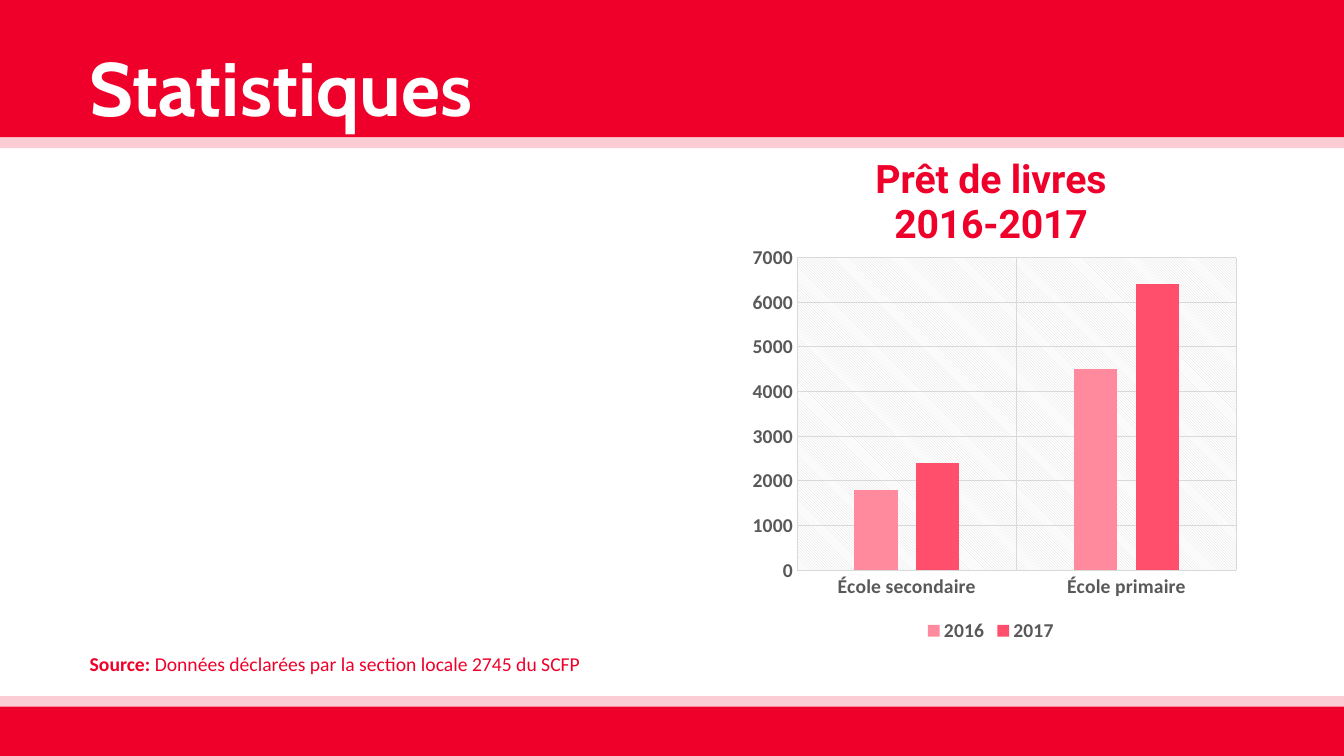
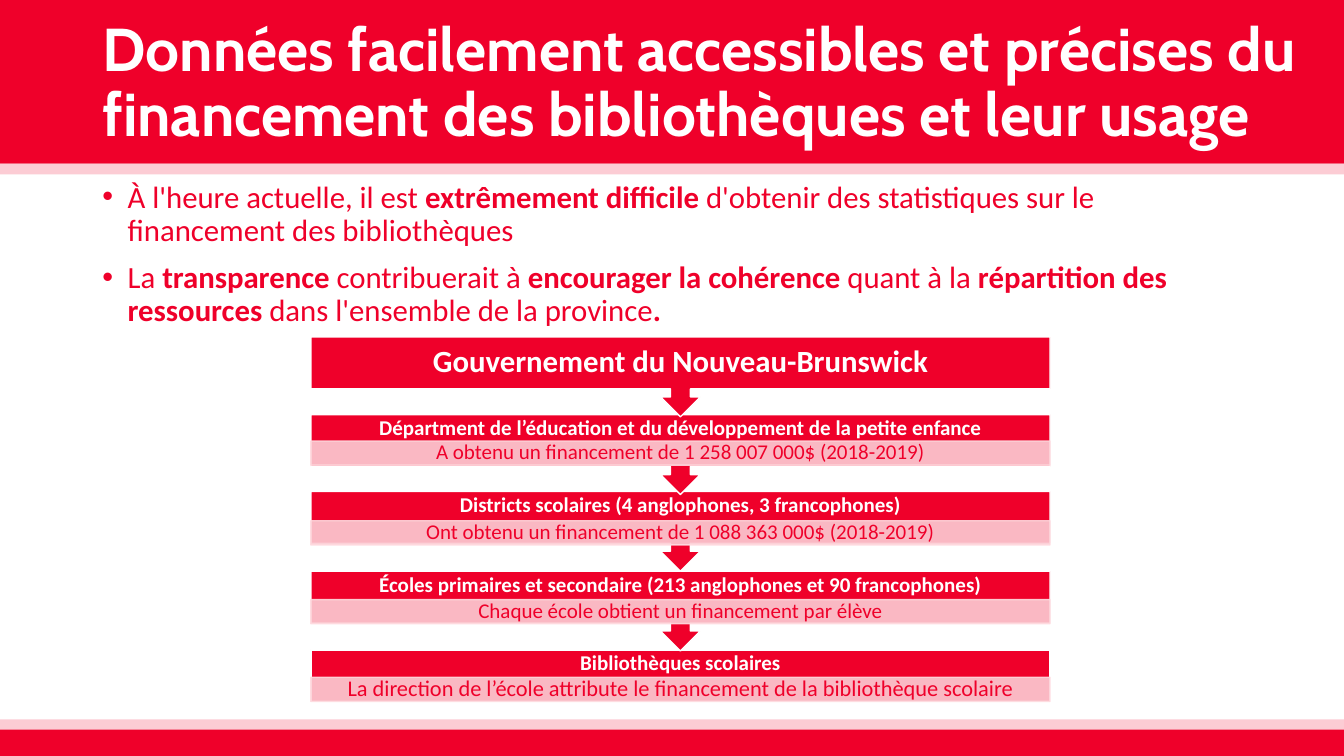
from lxml.etree import SubElement
from pptx import Presentation
from pptx.chart.data import CategoryChartData
from pptx.dml.color import RGBColor
from pptx.enum.chart import XL_CHART_TYPE, XL_LEGEND_POSITION, XL_TICK_MARK
from pptx.enum.shapes import MSO_SHAPE
from pptx.enum.text import MSO_ANCHOR, MSO_AUTO_SIZE, PP_ALIGN
from pptx.oxml import parse_xml
from pptx.oxml.ns import nsdecls, qn
from pptx.util import Pt

PX = 9525
WIDTH, HEIGHT = 1280, 720
STRIP_HEIGHT = 10
TITLE_ONLY, TITLE_AND_CONTENT = 5, 1

RED = RGBColor(0xEF, 0x00, 0x2A)
PALE_PINK = RGBColor(0xFC, 0xCC, 0xD4)
EDGE_PINK = RGBColor(0xFF, 0xDA, 0xDF)
LIGHT_RED = RGBColor(0xFF, 0x89, 0x9D)
MID_RED = RGBColor(0xFF, 0x4F, 0x6C)
WHITE = RGBColor(0xFF, 0xFF, 0xFF)
GREY = RGBColor(0x59, 0x59, 0x59)
GRID_GREY = RGBColor(0xD9, 0xD9, 0xD9)

STATISTICS = {
    "title": "Statistiques", "size": 54, "anchor": MSO_ANCHOR.BOTTOM,
    "title_box": (76, 0, 1104, 131), "top": 131, "lower_strip": 663, "bottom": 672,
}
FUNDING = {
    "title": "Données facilement accessibles et précises du financement des bibliothèques et leur usage",
    "size": 43.2, "anchor": MSO_ANCHOR.MIDDLE,
    "title_box": (88, 11, 1192, 139), "top": 156, "lower_strip": 685, "bottom": 694,
}

CHART_BOX = (710, 131, 468, 485)
CHART_TITLE = "Prêt de livres\n2016-2017"
SCHOOLS = ("École secondaire", "École primaire")
LOANS = (("2016", (1800, 4500), LIGHT_RED), ("2017", (2400, 6400), MID_RED))
PLOT_LAYOUT = {"x": 0.105, "y": 0.236, "w": 0.895, "h": 0.614}

SOURCE_BOX = (76, 616, 510, 33)
SOURCE = (("Source: ", True), ("Données déclarées par la section locale 2745 du SCFP", False))

BODY_BOX = (88, 168, 1104, 457)
BULLETS = (
    (
        ("À l'heure actuelle, il est ", False),
        ("extrêmement difficile ", True),
        ("d'obtenir des statistiques sur le financement des bibliothèques", False),
    ),
    (
        ("La ", False),
        ("transparence", True),
        (" contribuerait à ", False),
        ("encourager la cohérence ", True),
        ("quant à la ", False),
        ("répartition des ressources ", True),
        ("dans l'ensemble de la province", False),
        (".", True),
    ),
)

FLOW_LEFT, FLOW_WIDTH = 296, 704
CALLOUT_HEIGHT, BOX_HEIGHT = 76, 49
LABEL_HEIGHT, DETAIL_HEIGHT = 27, 23
GOVERNMENT = (321, "Gouvernement du Nouveau-Brunswick")
LEVELS = (
    (395, "Départment de l’éducation et du développement de la petite enfance",
     420, "A obtenu un financement de 1 258 007 000$ (2018-2019)", 15),
    (468, "Districts scolaires (4 anglophones, 3 francophones)",
     496, "Ont obtenu un financement de 1 088 363 000$ (2018-2019)", 15),
    (544, "Écoles primaires et secondaire (213 anglophones et 90 francophones)",
     571, "Chaque école obtient un financement par élève", 15),
    (619, "Bibliothèques scolaires",
     645, "La direction de l’école attribute le financement de la bibliothèque scolaire", 16),
)


def scaled(box):
    return [length * PX for length in box]


def place(shape, box):
    shape.left, shape.top, shape.width, shape.height = scaled(box)


def style(font, size, color, bold=False, name="Calibri"):
    font.size, font.bold, font.name = Pt(size), bold, name
    font.color.rgb = color


def add_block(slide, box, fill, kind=MSO_SHAPE.RECTANGLE, line=None, opacity=None):
    shape = slide.shapes.add_shape(kind, *scaled(box))
    shape.shadow.inherit = False
    shape.fill.solid()
    shape.fill.fore_color.rgb = fill
    if line is None:
        shape.line.fill.background()
    else:
        shape.line.color.rgb = line
        shape.line.width = Pt(1)
    if opacity:
        for color in shape.element.xpath(".//p:spPr//a:srgbClr"):
            SubElement(color, qn("a:alpha"), val=str(opacity * 1000))
    return shape


def write_centred(shape, text, size, color, bold=False, bottom_inset=0):
    frame = shape.text_frame
    frame.word_wrap = True
    frame.vertical_anchor = MSO_ANCHOR.MIDDLE
    frame.margin_top = 0
    frame.margin_bottom = bottom_inset * PX
    paragraph = frame.paragraphs[0]
    paragraph.text = text
    paragraph.alignment = PP_ALIGN.CENTER
    paragraph.line_spacing = 0.9
    style(paragraph.font, size, color, bold)


def write_runs(paragraph, parts, size):
    for text, bold in parts:
        run = paragraph.add_run()
        run.text = text
        style(run.font, size, RED, bold)


def add_titled_slide(presentation, design, layout):
    slide = presentation.slides.add_slide(presentation.slide_layouts[layout])
    bands = (
        (0, design["top"], RED),
        (design["bottom"], HEIGHT - design["bottom"], RED),
        (design["lower_strip"], STRIP_HEIGHT, PALE_PINK),
        (design["top"], STRIP_HEIGHT, PALE_PINK),
    )
    for top, height, color in bands:
        add_block(slide, (0, top, WIDTH, height), color)
    title = slide.shapes.title
    place(title, design["title_box"])
    slide.shapes.element.append(title.element)
    frame = title.text_frame
    frame.auto_size = MSO_AUTO_SIZE.NONE
    frame.vertical_anchor = design["anchor"]
    paragraph = frame.paragraphs[0]
    paragraph.text = design["title"]
    paragraph.alignment = PP_ALIGN.LEFT
    paragraph.line_spacing = 0.9
    style(paragraph.font, design["size"], WHITE, True, "Cabin")
    return slide


def format_plot_area(chart):
    plot_area = chart.element.xpath(".//c:plotArea")[0]
    for layout in plot_area.findall(qn("c:layout")):
        plot_area.remove(layout)
    modes = '<c:xMode val="edge"/><c:yMode val="edge"/>'
    lengths = "".join(f'<c:{key} val="{value}"/>' for key, value in PLOT_LAYOUT.items())
    plot_area.insert(0, parse_xml(
        f'<c:layout {nsdecls("c")}><c:manualLayout><c:layoutTarget val="inner"/>'
        f'{modes}{lengths}</c:manualLayout></c:layout>'
    ))
    plot_area.append(parse_xml(
        f'<c:spPr {nsdecls("c", "a")}><a:pattFill prst="ltDnDiag">'
        f'<a:fgClr><a:srgbClr val="{GRID_GREY}"/></a:fgClr>'
        f'<a:bgClr><a:srgbClr val="{WHITE}"/></a:bgClr></a:pattFill></c:spPr>'
    ))


def add_loans_chart(slide):
    data = CategoryChartData()
    data.categories = SCHOOLS
    for name, values, color in LOANS:
        data.add_series(name, values)
    graphic = slide.shapes.add_chart(XL_CHART_TYPE.COLUMN_CLUSTERED, *scaled(CHART_BOX), data)
    slide.shapes.element.insert(2, graphic.element)
    chart = graphic.chart
    style(chart.font, 14, GREY, True)

    chart.has_title = True
    chart.chart_title.include_in_layout = False
    chart.chart_title.text_frame.text = CHART_TITLE
    for paragraph in chart.chart_title.text_frame.paragraphs:
        style(paragraph.runs[0].font, 28, RED, True, "Roboto")

    chart.has_legend = True
    chart.legend.position = XL_LEGEND_POSITION.BOTTOM
    chart.legend.include_in_layout = False
    style(chart.legend.font, 14, GREY, True)

    for axis in (chart.category_axis, chart.value_axis):
        axis.major_tick_mark = axis.minor_tick_mark = XL_TICK_MARK.NONE
        axis.has_major_gridlines = True
        for line in (axis.major_gridlines.format.line, axis.format.line):
            line.color.rgb = GRID_GREY
            line.width = Pt(0.75)
        style(axis.tick_labels.font, 14, GREY, True)
    chart.value_axis.format.line.fill.background()
    chart.value_axis.minimum_scale = 0
    chart.value_axis.maximum_scale = 7000
    chart.value_axis.major_unit = 1000

    plot = chart.plots[0]
    plot.gap_width, plot.overlap = 267, -43
    plot.vary_by_categories = False
    for series, (name, values, color) in zip(plot.series, LOANS):
        series.format.fill.solid()
        series.format.fill.fore_color.rgb = color
    format_plot_area(chart)


def build_statistics(presentation):
    slide = add_titled_slide(presentation, STATISTICS, TITLE_ONLY)
    add_loans_chart(slide)
    source = slide.shapes.add_textbox(*scaled(SOURCE_BOX))
    source.text_frame.word_wrap = False
    write_runs(source.text_frame.paragraphs[0], SOURCE, 14)


def write_bullets(slide):
    body = slide.placeholders[1]
    place(body, BODY_BOX)
    slide.shapes.element.append(body.element)
    frame = body.text_frame
    frame.auto_size = MSO_AUTO_SIZE.NONE
    for index, parts in enumerate(BULLETS):
        paragraph = frame.add_paragraph() if index else frame.paragraphs[0]
        paragraph.line_spacing = 0.9
        paragraph.space_before = Pt(10)
        properties = paragraph._p.get_or_add_pPr()
        properties.set("marL", str(24 * PX))
        properties.set("indent", str(-24 * PX))
        write_runs(paragraph, parts, 22)


def add_flow(slide):
    for level in reversed(LEVELS):
        top, label, detail_top, detail, detail_size = level
        is_last = level is LEVELS[-1]
        kind = MSO_SHAPE.RECTANGLE if is_last else MSO_SHAPE.DOWN_ARROW_CALLOUT
        height = BOX_HEIGHT if is_last else CALLOUT_HEIGHT
        box = add_block(slide, (FLOW_LEFT, top, FLOW_WIDTH, height), RED, kind, WHITE)
        write_centred(box, label, 15, WHITE, True, BOX_HEIGHT - LABEL_HEIGHT)
        strip = add_block(slide, (FLOW_LEFT, detail_top, FLOW_WIDTH, DETAIL_HEIGHT),
                          PALE_PINK, line=EDGE_PINK, opacity=90)
        write_centred(strip, detail, detail_size, RED)
    top, label = GOVERNMENT
    box = add_block(slide, (FLOW_LEFT, top, FLOW_WIDTH, CALLOUT_HEIGHT), RED,
                    MSO_SHAPE.DOWN_ARROW_CALLOUT, WHITE)
    write_centred(box, label, 22, WHITE, True)


def build_funding(presentation):
    slide = add_titled_slide(presentation, FUNDING, TITLE_AND_CONTENT)
    write_bullets(slide)
    add_flow(slide)


def main():
    presentation = Presentation()
    presentation.slide_width, presentation.slide_height = scaled((WIDTH, HEIGHT))
    build_statistics(presentation)
    build_funding(presentation)
    presentation.save("out.pptx")


if __name__ == "__main__":
    main()
